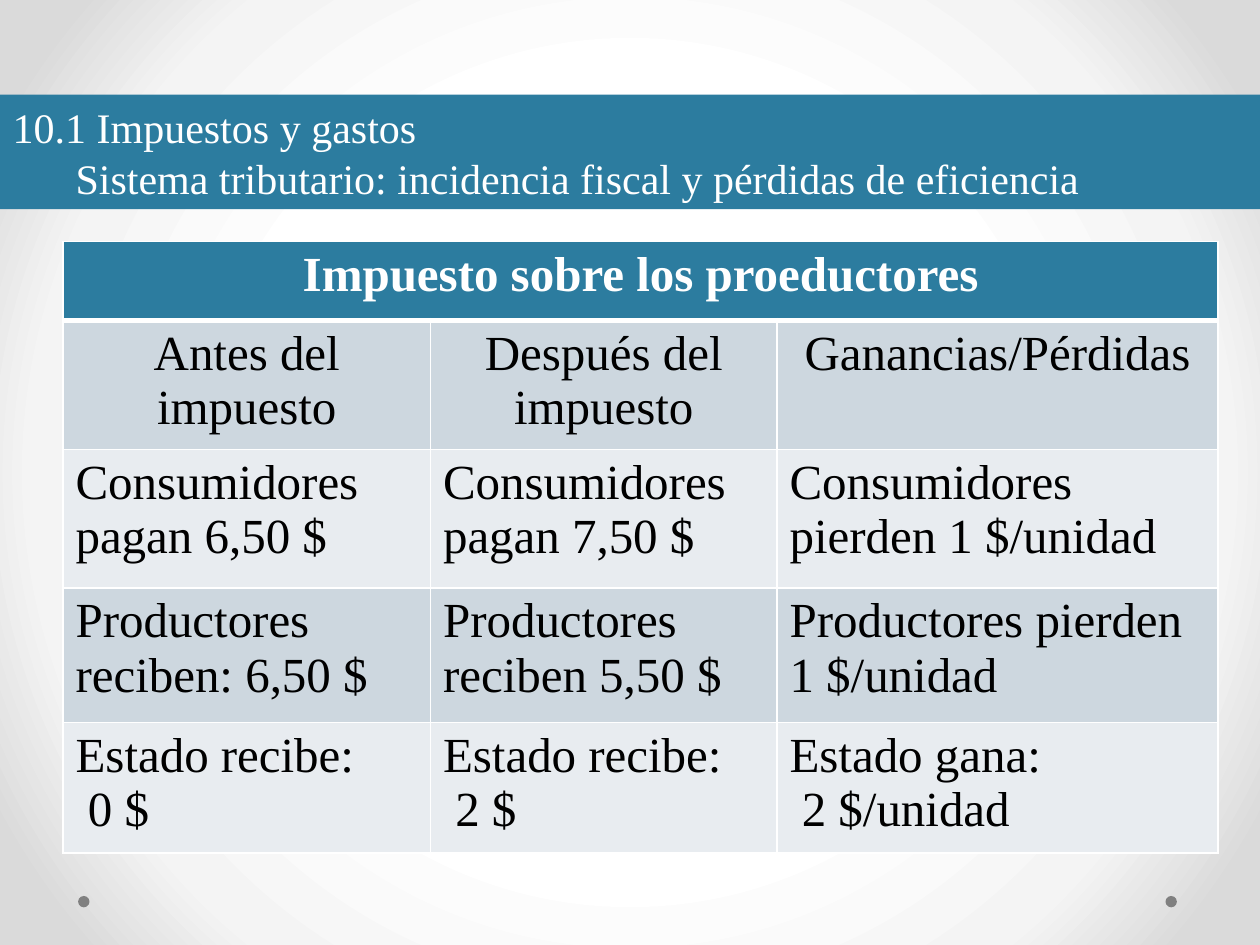
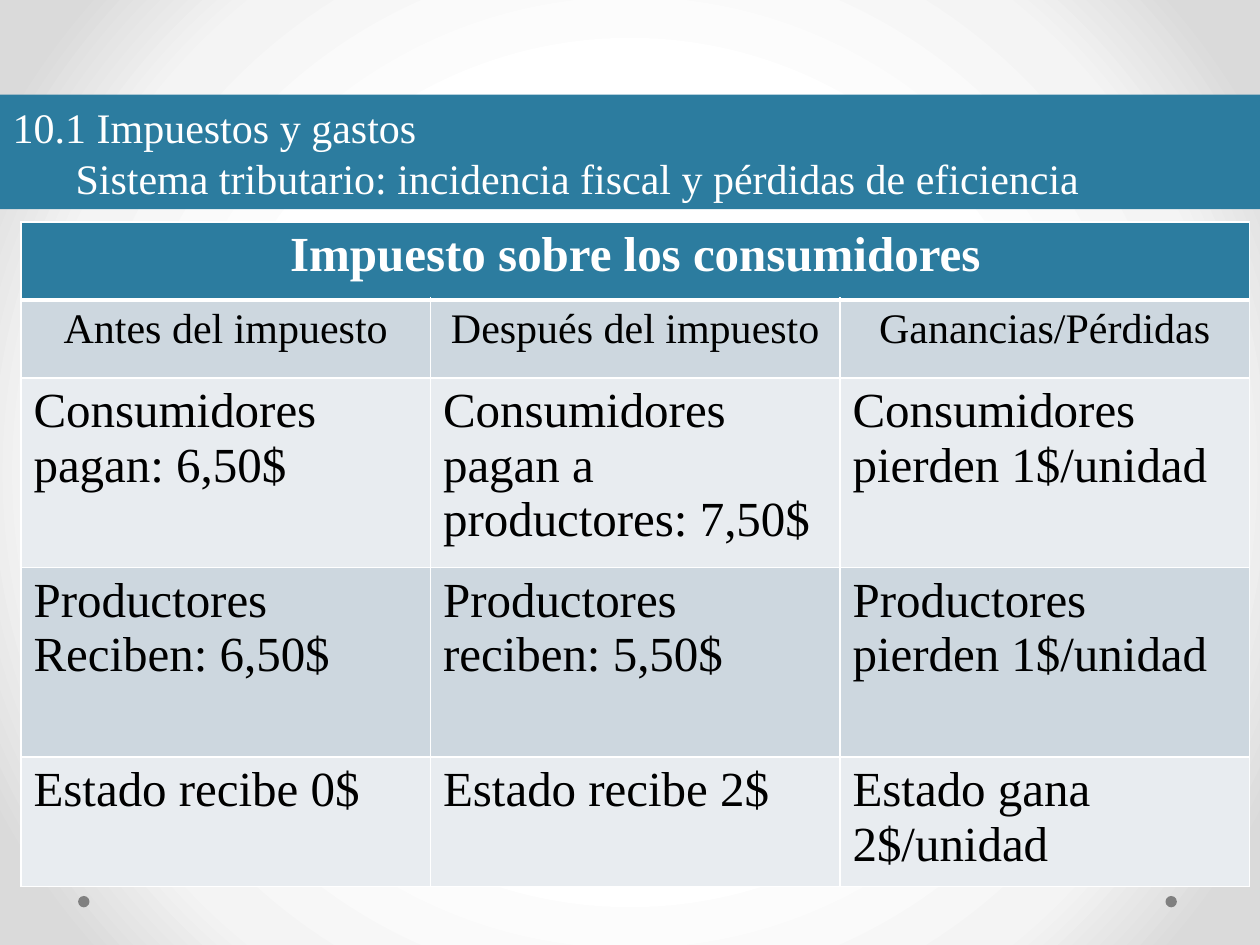
from lxml import etree
from pptx import Presentation
from pptx.dml.color import RGBColor
from pptx.enum.shapes import MSO_SHAPE
from pptx.enum.text import MSO_ANCHOR, MSO_AUTO_SIZE, PP_ALIGN
from pptx.oxml import parse_xml
from pptx.oxml.ns import nsdecls, qn
from pptx.util import Pt

OVAL = MSO_SHAPE.OVAL
LEFT, CENTER = PP_ALIGN.LEFT, PP_ALIGN.CENTER
MIDDLE, NO_FIT = MSO_ANCHOR.MIDDLE, MSO_AUTO_SIZE.NONE
TITLE_ONLY = 5

COLORS = {
    "band": "2C7C9F", "dot": "808080", "white": "FFFFFF", "text": "000000",
    "dark_row": "CDD7DF", "light_row": "E8ECF0",
    "bg_mid": "F4F4F4", "bg_edge": "DADADA",
}
FONT = "Times New Roman"
BAND_BOX = (0, 54, 720, 65.5)
DOT_BOXES = [(44.64, 512, 6.5, 6.5), (666, 512, 6.5, 6.5)]
TITLE = ("10.1 Impuestos y gastos\n"
         "\tSistema tributario: incidencia fiscal y pérdidas de eficiencia")
HEADINGS = ["Antes del impuesto", "Después del impuesto", "Ganancias/Pérdidas"]

PRODUCERS = [
    ["Impuesto sobre los proeductores", "", ""],
    HEADINGS,
    ["Consumidores pagan 6,50 $", "Consumidores pagan 7,50 $",
     "Consumidores pierden 1 $/unidad"],
    ["Productores reciben: 6,50 $", "Productores reciben 5,50 $",
     "Productores pierden\n1 $/unidad"],
    ["Estado recibe:\n 0 $", "Estado recibe:\n 2 $",
     "Estado gana:\n 2 $/unidad"],
]
CONSUMERS = [
    ["Impuesto sobre los consumidores", "", ""],
    HEADINGS,
    ["Consumidores pagan: 6,50$",
     "Consumidores pagan a productores: 7,50$",
     "Consumidores pierden 1$/unidad"],
    ["Productores\nReciben: 6,50$", "Productores reciben: 5,50$",
     "Productores pierden 1$/unidad"],
    ["Estado recibe 0$", "Estado recibe 2$", "Estado gana 2$/unidad"],
]


def rgb(name):
    return RGBColor.from_string(COLORS[name])


def format_text(tf, size, color, align, bold=False):
    for p in tf.paragraphs:
        p.alignment = align
        for r in p.runs:
            r.font.name, r.font.size, r.font.bold = FONT, Pt(size), bold
            r.font.color.rgb = rgb(color)


def set_background(master):
    """Radial grey gradient shared by all slides."""
    master.background.fill.solid()
    stops = "".join(
        f'<a:gs pos="{pos}000"><a:srgbClr val="{COLORS[name]}"/></a:gs>'
        for pos, name in [(50, "white"), (76, "bg_mid"), (92, "bg_edge")])
    gradient = parse_xml(
        f'<a:gradFill {nsdecls("a")} rotWithShape="1"><a:gsLst>{stops}</a:gsLst>'
        '<a:path path="circle"><a:fillToRect l="50000" t="50000" r="50000" '
        'b="50000"/></a:path></a:gradFill>')
    bg = master.element.find(".//" + qn("p:bgPr"))
    bg.replace(bg.find(qn("a:solidFill")), gradient)


def add_dots(s):
    for box in DOT_BOXES:
        dot = s.shapes.add_shape(OVAL, *map(Pt, box))
        dot.shadow.inherit = False
        dot.fill.solid()
        dot.fill.fore_color.rgb = rgb("dot")
        dot.line.fill.background()


def add_title_band(s, box):
    sp = s.shapes.title
    sp.left, sp.top, sp.width, sp.height = map(Pt, box)
    sp.fill.solid()
    sp.fill.fore_color.rgb = rgb("band")
    tf = sp.text_frame
    tf.text = TITLE
    tf.word_wrap, tf.auto_size, tf.vertical_anchor = True, NO_FIT, MIDDLE
    format_text(tf, 24, "white", LEFT)
    for p in tf.paragraphs:
        p.line_spacing = Pt(29)


def set_borders(cell, widths):
    """Add white borders, given as widths by side in schema order."""
    tc_pr = cell._tc.get_or_add_tcPr()
    for i, (side, width) in enumerate(widths.items()):
        ln = etree.Element(qn("a:ln" + side), w=str(Pt(width)))
        fill = etree.SubElement(ln, qn("a:solidFill"))
        etree.SubElement(fill, qn("a:srgbClr"), val=COLORS["white"])
        tc_pr.insert(i, ln)


def add_tax_table(s, left, top, col_widths, row_heights, rows, heading_size):
    frame = s.shapes.add_table(len(rows), len(col_widths), Pt(left), Pt(top),
                               Pt(sum(col_widths)), Pt(sum(row_heights)))
    table = frame.table
    for col, width in zip(table.columns, col_widths):
        col.width = Pt(width)
    for row, height in zip(table.rows, row_heights):
        row.height = Pt(height)
    table.cell(0, 0).merge(table.cell(0, len(col_widths) - 1))

    for i, texts in enumerate(rows):
        header = i == 0
        fill = "band" if header else "dark_row" if i % 2 else "light_row"
        size = heading_size if i == 1 else 28
        for j, text in enumerate(texts):
            cell = table.cell(i, j)
            cell.fill.solid()
            cell.fill.fore_color.rgb = rgb(fill)
            set_borders(cell, {"L": 1, "R": 1, "T": 3 if i == 1 else 1,
                               "B": 3 if header else 1})
            if text:
                cell.text_frame.text = text
                format_text(cell.text_frame, size,
                            "white" if header else "text",
                            CENTER if i < 2 else LEFT, bold=header)


def add_tax_slide(prs, **table):
    s = prs.slides.add_slide(prs.slide_layouts[TITLE_ONLY])
    add_dots(s)
    add_title_band(s, BAND_BOX)
    add_tax_table(s, **table)


def main():
    prs = Presentation()
    prs.slide_width, prs.slide_height = Pt(720), Pt(540)
    set_background(prs.slide_master)

    # Tax on producers
    add_tax_slide(prs, left=36, top=138, col_widths=[210, 198, 252],
                  row_heights=[45, 74, 79, 77, 74.5], rows=PRODUCERS,
                  heading_size=28)
    # Tax on consumers
    add_tax_slide(prs, left=12, top=126.75, col_widths=[234] * 3,
                  row_heights=[44.6, 44.6, 108.3, 108.3, 74], rows=CONSUMERS,
                  heading_size=24)
    prs.save("out.pptx")


if __name__ == "__main__":
    main()
